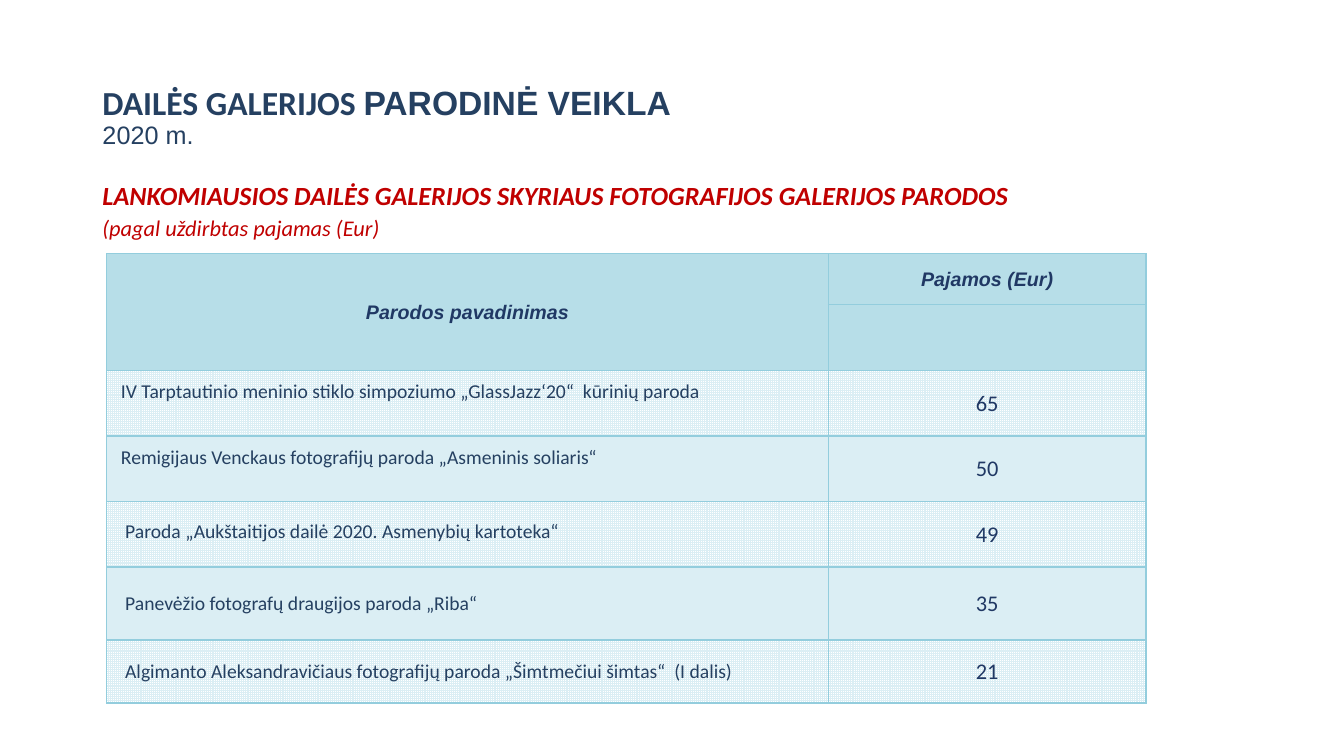
from lxml.etree import SubElement
from pptx import Presentation
from pptx.dml.color import RGBColor
from pptx.enum.dml import MSO_PATTERN
from pptx.enum.text import MSO_ANCHOR as Anchor, MSO_AUTO_SIZE as AutoSize, PP_ALIGN as Align
from pptx.oxml.ns import qn
from pptx.util import Inches, Pt

NAVY, INDIGO, RED = "254061", "203864", "C00000"
HEADER, PALE, WHITE, BORDER = "B7DEE8", "DBEEF4", "FFFFFF", "93CDDD"

# Exhibition, income in euros, left indent and bottom inset in grid units
EXHIBITIONS = [
    ("IV Tarptautinio meninio stiklo simpoziumo „GlassJazz‘20“  kūrinių paroda", 65, 1.7, 2.7),
    ("Remigijaus Venckaus fotografijų paroda „Asmeninis soliaris“", 50, 1.7, 2.7),
    ("Paroda „Aukštaitijos dailė 2020. Asmenybių kartoteka“", 49, 2.2, 0.7),
    ("Panevėžio fotografų draugijos paroda „Riba“", 35, 2.2, 0),
    ("Algimanto Aleksandravičiaus fotografijų paroda „Šimtmečiui šimtas“  (I dalis)", 21, 2.2, 0),
]
COLUMN_WIDTHS = [85.9, 37.8]
ROW_HEIGHTS = [6.1, 7.8, 7.8, 7.8, 7.8, 8.7, 7.5]


def color(hex_string):
    return RGBColor.from_string(hex_string)


def grid(units):
    """Turn grid units, twelve to the inch, into a length."""
    return Inches(units / 12)


class GallerySlide:
    def __init__(self, presentation):
        self.slide = presentation.slides.add_slide(presentation.slide_layouts[1])
        self.title, self.body = self.slide.placeholders

    def place(self, shape, left, top, width, height, anchor):
        shape.left, shape.top = grid(left), grid(top)
        shape.width, shape.height = grid(width), grid(height)
        frame = shape.text_frame
        frame.word_wrap = True
        frame.auto_size = AutoSize.NONE
        frame.vertical_anchor = anchor
        return frame

    def run(self, paragraph, text, size, hex_color, font="Calibri", bold=False, italic=False):
        run = paragraph.add_run()
        run.text = text
        run.font.size = Pt(size)
        run.font.name = font
        run.font.bold = bold
        run.font.italic = italic
        run.font.color.rgb = color(hex_color)

    def add_title(self):
        frame = self.place(self.title, 11, 6, 138, 12.4, Anchor.BOTTOM)
        paragraph = frame.paragraphs[0]
        paragraph.alignment = Align.LEFT
        paragraph.line_spacing = 0.9
        self.run(paragraph, "DAILĖS GALERIJOS ", 24, NAVY, bold=True)
        self.run(paragraph, "PARODINĖ VEIKLA", 24, NAVY, "Arial", bold=True)
        paragraph.add_line_break()
        self.run(paragraph, "2020 m.", 18, NAVY, "Arial")

    def add_subtitle(self):
        frame = self.place(self.body, 11, 22.1, 138, 7.6, Anchor.TOP)
        lines = [
            ("LANKOMIAUSIOS DAILĖS GALERIJOS SKYRIAUS FOTOGRAFIJOS GALERIJOS PARODOS", 18.7, True),
            ("(pagal uždirbtas pajamas (Eur)", 16, False),
        ]
        for index, (text, size, bold) in enumerate(lines):
            paragraph = frame.add_paragraph() if index else frame.paragraphs[0]
            paragraph.line_spacing = 0.6
            paragraph.space_before = Pt(10)
            properties = paragraph._p.get_or_add_pPr()
            properties.set("marL", "0")
            properties.set("indent", "0")
            SubElement(properties, qn("a:buNone"))
            self.run(paragraph, text, size, RED, bold=bold, italic=True)

    def style_cell(self, cell, fill, pattern=None, indent=0.1, bottom=0):
        cell.vertical_anchor = Anchor.MIDDLE
        cell.margin_left = grid(indent)
        cell.margin_right = cell.margin_top = grid(0.1)
        cell.margin_bottom = grid(bottom)
        properties = cell._tc.get_or_add_tcPr()
        for side in ("lnL", "lnR", "lnT", "lnB"):
            line = SubElement(properties, qn(f"a:{side}"), w=str(Pt(1)))
            solid = SubElement(line, qn("a:solidFill"))
            SubElement(solid, qn("a:srgbClr"), val=BORDER)
        if pattern:
            cell.fill.patterned()
            cell.fill.pattern = pattern
            cell.fill.back_color.rgb = color(WHITE)
        else:
            cell.fill.solid()
        cell.fill.fore_color.rgb = color(fill)

    def write_cell(self, cell, text, size, hex_color, align=Align.CENTER, **font):
        paragraph = cell.text_frame.paragraphs[0]
        paragraph.alignment = align
        self.run(paragraph, text, size, hex_color, **font)

    def add_income_table(self):
        frame = self.slide.shapes.add_table(
            len(ROW_HEIGHTS), len(COLUMN_WIDTHS), grid(12.7), grid(30.2),
            grid(sum(COLUMN_WIDTHS)), grid(sum(ROW_HEIGHTS)))
        table = frame.table
        table.first_row = table.horz_banding = False
        for column, width in zip(table.columns, COLUMN_WIDTHS):
            column.width = grid(width)
        for row, height in zip(table.rows, ROW_HEIGHTS):
            row.height = grid(height)

        table.cell(0, 0).merge(table.cell(1, 0))
        for row in range(2):
            for column in range(2):
                self.style_cell(table.cell(row, column), HEADER)
        for column, heading in enumerate(["Parodos pavadinimas", "Pajamos (Eur)"]):
            self.write_cell(table.cell(0, column), heading, 14, INDIGO,
                            font="Arial", bold=True, italic=True)

        for index, (name, income, indent, bottom) in enumerate(EXHIBITIONS):
            pattern = None if index % 2 else MSO_PATTERN.SMALL_GRID
            name_cell, income_cell = table.rows[index + 2].cells
            self.style_cell(name_cell, PALE, pattern, indent, bottom)
            self.style_cell(income_cell, PALE, pattern)
            self.write_cell(name_cell, name, 14, NAVY, Align.LEFT)
            self.write_cell(income_cell, str(income), 16, INDIGO)


def main():
    presentation = Presentation()
    presentation.slide_width = Inches(13.33)
    presentation.slide_height = Inches(7.5)
    gallery = GallerySlide(presentation)
    gallery.add_title()
    gallery.add_subtitle()
    gallery.add_income_table()
    presentation.save("out.pptx")


if __name__ == "__main__":
    main()
